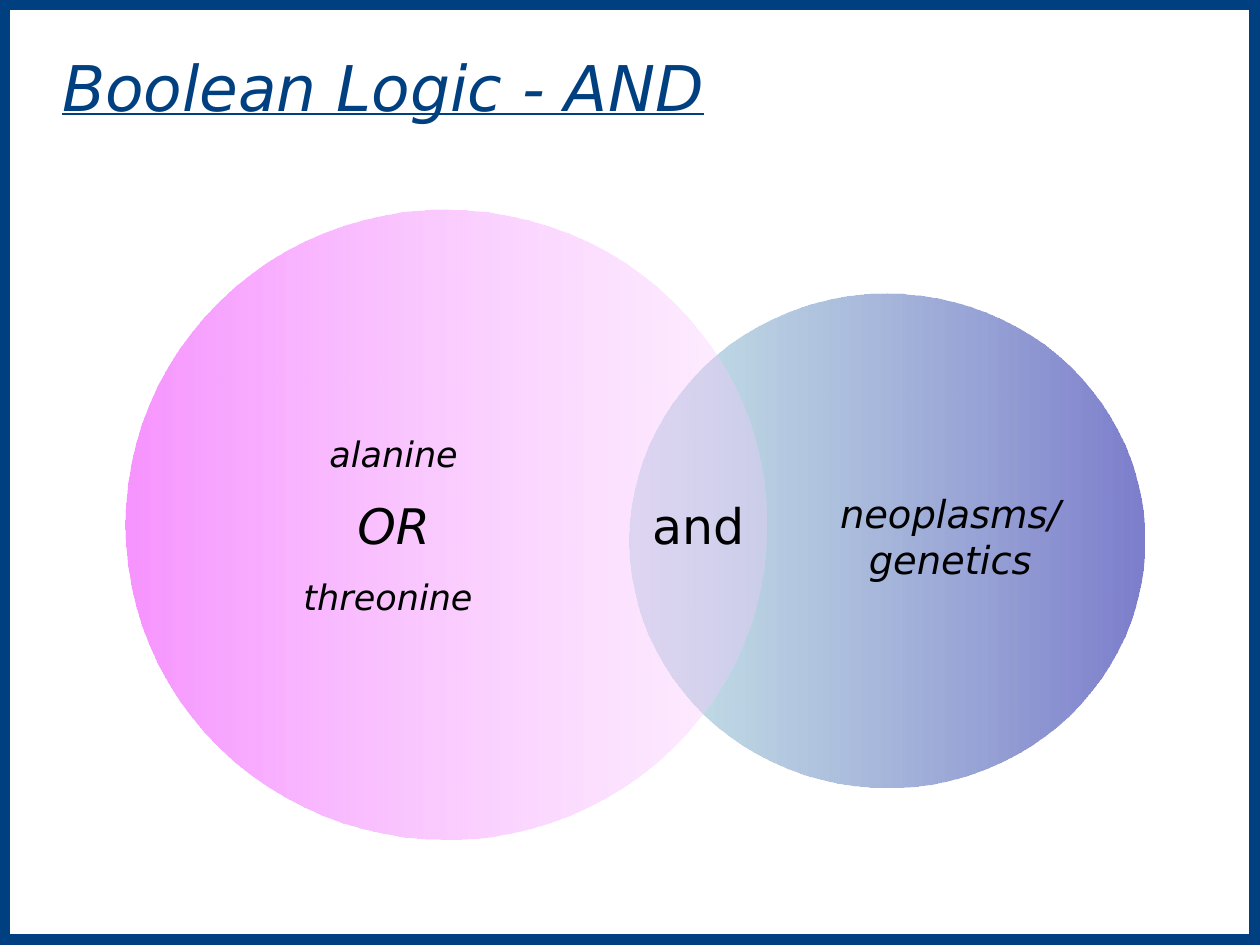
from dataclasses import dataclass

from lxml import etree
from pptx import Presentation
from pptx.dml.color import RGBColor
from pptx.enum.shapes import MSO_SHAPE
from pptx.enum.text import MSO_ANCHOR, PP_ALIGN
from pptx.oxml.ns import qn
from pptx.util import Pt

RECT = MSO_SHAPE.RECTANGLE
OVAL = MSO_SHAPE.OVAL
CENTER = PP_ALIGN.CENTER
TOP = MSO_ANCHOR.TOP
MIDDLE = MSO_ANCHOR.MIDDLE


@dataclass(frozen=True)
class Theme:
    font: str = "DejaVu Sans"
    navy: str = "004080"
    white: str = "FFFFFF"
    black: str = "000000"
    # Gradient stops: colour and opacity in percent
    pink: tuple = (("F794FF", 100), ("FACCFF", 30))
    blue: tuple = (("C0E1E4", 85), ("7D7FCC", 100))
    title: int = 36
    logic: int = 28
    topic: int = 22
    term: int = 20


THEME = Theme()


def color(code):
    return RGBColor.from_string(code)


def put_text(shape, lines, ink=THEME.black, italic=False, under=False,
             after=0, anchor=MIDDLE, wrap=False):
    """Write (text, size) lines as centred paragraphs."""
    frame = shape.text_frame
    frame.word_wrap = wrap
    frame.vertical_anchor = anchor
    # The whole width is free for text, so short words stay on one line
    frame.margin_left = frame.margin_right = 0
    for i, (text, size) in enumerate(lines):
        para = frame.add_paragraph() if i else frame.paragraphs[0]
        para.alignment = CENTER
        para.space_after = Pt(after)
        run = para.add_run()
        run.text = text
        font = run.font
        font.name = THEME.font
        font.size = Pt(size)
        font.color.rgb = color(ink)
        font.italic = italic
        font.underline = under


def add_label(shapes, box, lines, **style):
    label = shapes.add_textbox(*map(Pt, box))
    put_text(label, lines, **style)


def add_rect(shapes, box, line, width, fill=None):
    rect = shapes.add_shape(RECT, *map(Pt, box))
    rect.shadow.inherit = False
    if fill:
        rect.fill.solid()
        rect.fill.fore_color.rgb = color(fill)
    else:
        rect.fill.background()
    rect.line.color.rgb = color(line)
    rect.line.width = Pt(width)
    return rect


def add_circle(shapes, box, stops):
    """Draw a borderless oval that fades from left to right."""
    oval = shapes.add_shape(OVAL, *map(Pt, box))
    oval.shadow.inherit = False
    oval.line.fill.background()
    oval.fill.gradient()
    oval.fill.gradient_angle = 0
    for stop, place, (code, _) in zip(oval.fill.gradient_stops, (0, 1), stops):
        stop.position = place
        stop.color.rgb = color(code)
    for node, (_, alpha) in zip(oval.element.iter(qn("a:srgbClr")), stops):
        etree.SubElement(node, qn("a:alpha"), val=str(alpha * 1000))


def add_set(shapes, box, stops, area, lines, **style):
    """Group a circle of the diagram with its text."""
    parts = shapes.add_group_shape().shapes
    add_circle(parts, box, stops)
    add_label(parts, area, lines, italic=True, **style)


def main():
    deck = Presentation()
    deck.slide_width, deck.slide_height = Pt(720), Pt(540)
    shapes = deck.slides.add_slide(deck.slide_layouts[6]).shapes

    # Frame and title
    add_rect(shapes, (0, 0, 720, 540), THEME.navy, 12)
    title = add_rect(shapes, (24, 24, 390, 51), THEME.white, 0.75, THEME.white)
    put_text(title, [("Boolean Logic - AND", THEME.title)], ink=THEME.navy,
             italic=True, under=True, anchor=TOP, wrap=True)

    # Overlapping sets, the right one behind
    add_set(shapes, (360, 168, 294, 282), THEME.blue, (464.5, 252.5, 157, 108),
            [("neoplasms/", THEME.topic), ("genetics", THEME.topic)])
    add_set(shapes, (72, 120, 366, 360), THEME.pink, (102, 198, 246, 204),
            [("alanine", THEME.term), ("OR", THEME.logic),
             ("threonine ", THEME.term)], after=12)

    # Shared area
    add_label(shapes, (366, 282, 66, 36), [("and", THEME.logic)])

    deck.save("out.pptx")


if __name__ == "__main__":
    main()
